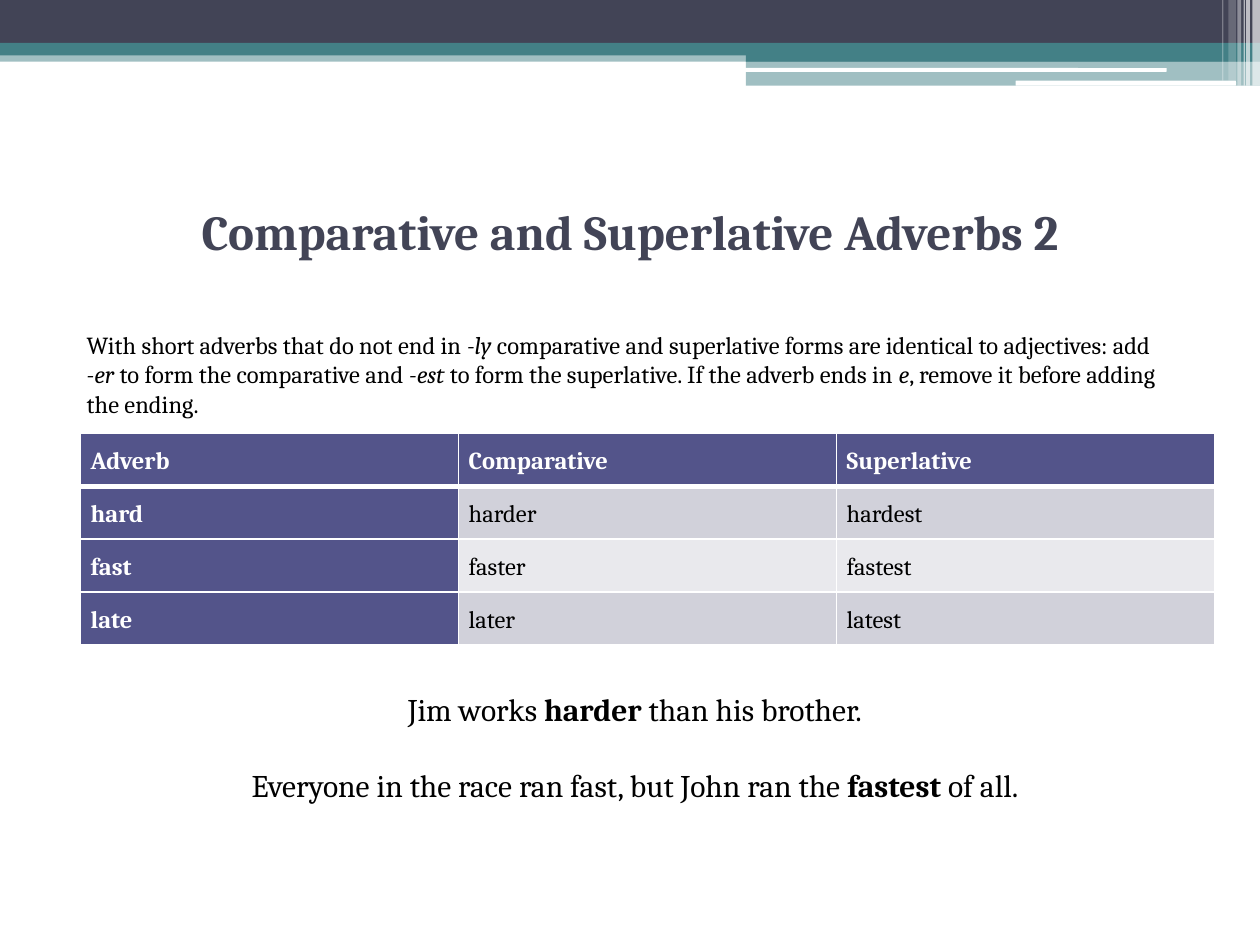
from lxml import etree
from pptx import Presentation
from pptx.dml.color import RGBColor
from pptx.enum.shapes import MSO_SHAPE as Shape
from pptx.enum.text import MSO_ANCHOR as Anchor, PP_ALIGN as Align
from pptx.oxml import parse_xml
from pptx.oxml.ns import nsdecls, qn
from pptx.util import Inches, Pt

NAVY, TEAL, WHITE, BLACK, PURPLE = "424456", "438086", "FFFFFF", "000000", "53548A"
color = RGBColor.from_string


def add_runs(paragraph, text, size, rgb=BLACK, emphasis="bold"):
    """Add runs to the paragraph; parts between asterisks get the emphasis."""
    for index, part in enumerate(text.split("*")):
        run = paragraph.add_run()
        run.text = part
        run.font.color.rgb = color(rgb)
        values = {"name": "Cambria", "size": Pt(size), emphasis: index % 2 == 1}
        for name, value in values.items():
            setattr(run.font, name, value)


presentation = Presentation()
presentation.slide_width, presentation.slide_height = Inches(10), Inches(7.5)
slide = presentation.slides.add_slide(presentation.slide_layouts[5])

# Header bands: left, top, width, height, colour, opacity in percent
bands = [
    (0, 0.4, 10, 0.09, TEAL, 50),
    (0, 0, 10, 0.34, NAVY, 100),
    (0, 0.34, 10, 0.1, TEAL, 100),
    (5.92, 0.39, 4.08, 0.1, TEAL, 100),
    (5.92, 0.48, 4.08, 0.2, TEAL, 50),
    (5.91, 0.54, 3.35, 0.03, WHITE, 100),
    (8.06, 0.64, 1.75, 0.04, WHITE, 100),
    (9.94, 0, 0.06, 0.68, WHITE, 65),
    (9.89, 0, 0.03, 0.68, WHITE, 65),
    (9.87, 0, 0.01, 0.68, WHITE, 60),
    (9.82, 0, 0.03, 0.68, WHITE, 40),
    (9.75, 0, 0.06, 0.64, WHITE, 20),
    (9.7, 0, 0.01, 0.64, WHITE, 30),
]
for left, top, width, height, rgb, opacity in bands:
    rounded = rgb == WHITE and width > height
    band = slide.shapes.add_shape(
        Shape.ROUNDED_RECTANGLE if rounded else Shape.RECTANGLE,
        Inches(left), Inches(top), Inches(width), Inches(height))
    band.shadow.inherit = False
    band.line.fill.background()
    band.fill.solid()
    band.fill.fore_color.rgb = color(rgb)
    if opacity < 100:
        fill_color = band.fill._xPr.find(qn("a:solidFill"))[0]
        etree.SubElement(fill_color, qn("a:alpha")).set("val", str(opacity * 1000))

title = slide.shapes.title
title.left, title.top, title.width, title.height = map(Inches, (0.5, 1.25, 9, 1.17))
title.text_frame.vertical_anchor = Anchor.MIDDLE
title.text_frame.paragraphs[0].alignment = Align.CENTER
add_runs(title.text_frame.paragraphs[0], "*Comparative and Superlative Adverbs 2*", 28, NAVY)

# Adverb table
rows = [
    ("Adverb", "Comparative", "Superlative"),
    ("hard", "harder", "hardest"),
    ("fast", "faster", "fastest"),
    ("late", "later", "latest"),
]
table = slide.shapes.add_table(
    len(rows), 3, Inches(0.64), Inches(3.44), Inches(9), Inches(1.68)).table
for row_index, words in enumerate(rows):
    for column_index, word in enumerate(words):
        heading = row_index == 0 or column_index == 0
        cell = table.cell(row_index, column_index)
        for side in ("left", "top", "right", "bottom"):
            setattr(cell, f"margin_{side}", Inches(0.08))
        cell.fill.solid()
        cell.fill.fore_color.rgb = color(
            PURPLE if heading else "D1D1DA" if row_index % 2 else "E9E9ED")
        paragraph = cell.text_frame.paragraphs[0]
        paragraph.line_spacing, paragraph.space_after = 1.15, Pt(10)
        add_runs(paragraph, f"*{word}*" if heading else word, 14, WHITE if heading else BLACK)
        for position, side in enumerate("LRTB"):
            thick = (row_index, side) in ((0, "B"), (1, "T"))
            cell._tc.get_or_add_tcPr().insert(position, parse_xml(
                f'<a:ln{side} {nsdecls("a")} w="{Pt(3 if thick else 1)}">'
                f'<a:solidFill><a:srgbClr val="{WHITE}"/></a:solidFill></a:ln{side}>'))

# Example sentences, centred below the table
examples = slide.shapes.add_textbox(
    Inches(0.59), Inches(5.38), Inches(8.9), Inches(1.1)).text_frame
examples.word_wrap = True
examples.vertical_anchor = Anchor.MIDDLE
first, second = examples.paragraphs[0], examples.add_paragraph()
second.space_before = Pt(22)
for paragraph, sentence in (
    (first, "Jim works *harder* than his brother."),
    (second, "Everyone in the race ran fast, but John ran the *fastest* of all."),
):
    paragraph.alignment = Align.CENTER
    add_runs(paragraph, sentence, 18)

rule = slide.shapes.add_textbox(
    Inches(0.59), Inches(2.57), Inches(8.9), Inches(0.81)).text_frame
rule.word_wrap = True
add_runs(
    rule.paragraphs[0],
    "With short adverbs that do not end in *-ly* comparative and superlative forms are "
    "identical to adjectives: add *-er* to form the comparative and *-est* to form the "
    "superlative. If the adverb ends in *e*, remove it before adding the ending.",
    14, emphasis="italic")

presentation.save("out.pptx")
